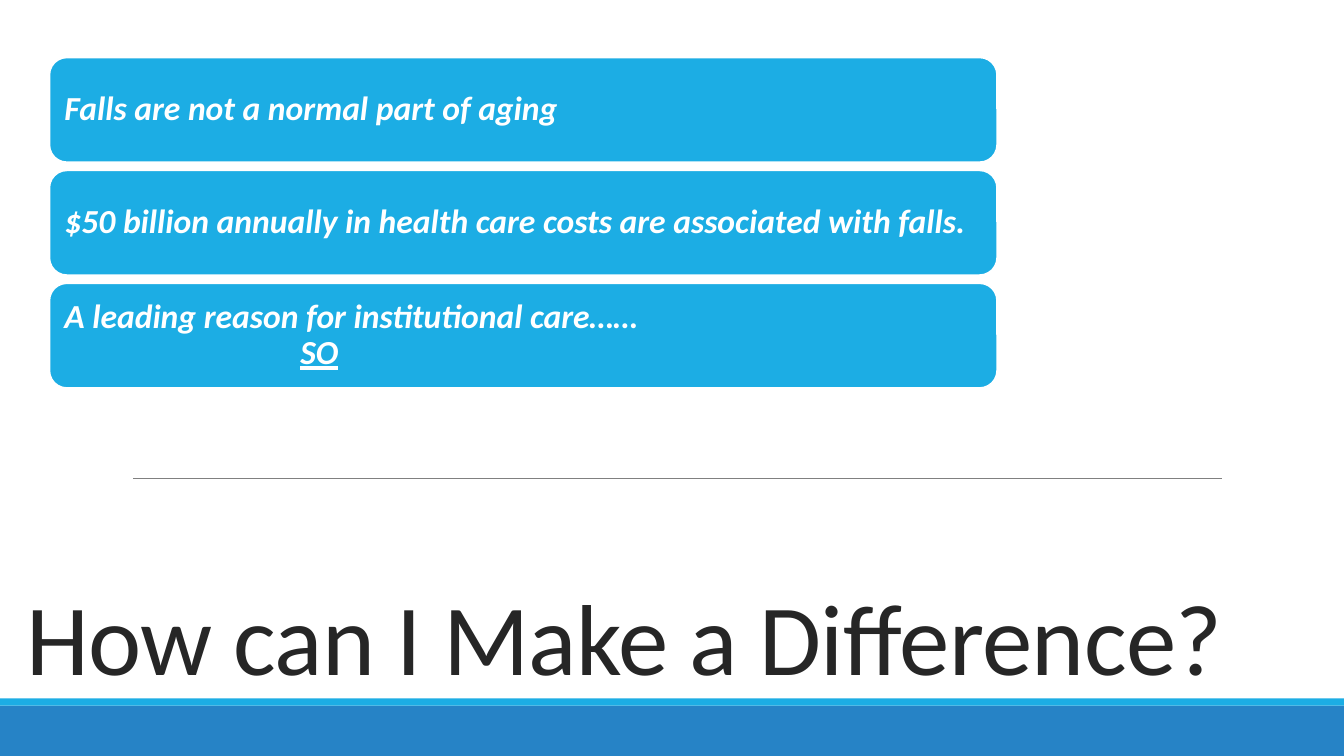
from pptx import Presentation
from pptx.dml.color import RGBColor
from pptx.enum.shapes import MSO_CONNECTOR, MSO_SHAPE
from pptx.enum.text import MSO_ANCHOR, PP_ALIGN
from pptx.oxml.ns import qn
from pptx.util import Inches, Pt
from lxml import etree

RECT = MSO_SHAPE.RECTANGLE
ROUNDED = MSO_SHAPE.ROUNDED_RECTANGLE
STRAIGHT = MSO_CONNECTOR.STRAIGHT
MIDDLE = MSO_ANCHOR.MIDDLE
BOTTOM = MSO_ANCHOR.BOTTOM
LEFT = PP_ALIGN.LEFT

WHITE = RGBColor(0xFF, 0xFF, 0xFF)
CYAN = RGBColor(0x1C, 0xAD, 0xE4)
BLUE = RGBColor(0x26, 0x83, 0xC6)
GRAY = RGBColor(0x80, 0x80, 0x80)
DARK = RGBColor(0x26, 0x26, 0x26)


def add_box(kind, x, y, w, h, color):
    sp = s.shapes.add_shape(kind, Inches(x), Inches(y), Inches(w), Inches(h))
    sp.shadow.inherit = False
    sp.fill.solid()
    sp.fill.fore_color.rgb = color
    sp.line.fill.background()
    return sp


def add_run(p, text, size, color):
    r = p.add_run()
    r.text = text
    r.font.name = "Calibri"
    r.font.size = Pt(size)
    r.font.color.rgb = color
    return r


prs = Presentation()
prs.slide_width = Inches(13.33)
prs.slide_height = Inches(7.5)
s = prs.slides.add_slide(prs.slide_layouts[6])

add_box(RECT, 0, 7, 13.33, 0.5, BLUE)
add_box(RECT, 0, 6.93, 13.33, 0.07, CYAN)

rule = s.shapes.add_connector(STRAIGHT, Inches(1.32), Inches(4.75), Inches(12.12), Inches(4.75))
rule.line.color.rgb = GRAY
rule.line.width = Pt(0.5)
etree.SubElement(rule._element.spPr, qn("a:effectLst"))

title = s.shapes.add_textbox(Inches(0.16), Inches(4.66), Inches(13.02), Inches(2.3))
tf = title.text_frame
tf.word_wrap = True
tf.vertical_anchor = BOTTOM
p = tf.paragraphs[0]
p.line_spacing = 0.85
r = add_run(p, "How can I Make a Difference?", 72, DARK)
r.font._element.set("spc", "-50")

facts = [
    ["Falls are not a normal part of aging"],
    ["$50 billion annually in health care costs are associated with falls."],
    ["A leading reason for institutional care……", "SO"],
]
for i, lines in enumerate(facts):
    sp = add_box(ROUNDED, 0.49, 0.57 + 1.12 * i, 9.4, 1.04, CYAN)
    sp.line.color.rgb = WHITE
    sp.line.width = Pt(1.25)
    tf = sp.text_frame
    tf.word_wrap = True
    tf.vertical_anchor = MIDDLE
    tf.margin_left = tf.margin_right = Inches(0.1)
    tf.margin_top = tf.margin_bottom = Inches(0.1)
    for j, line in enumerate(lines):
        p = tf.paragraphs[0] if j == 0 else tf.add_paragraph()
        p.alignment = LEFT
        p.line_spacing = 0.9
        r = add_run(p, line, 24, WHITE)
        r.font.bold = r.font.italic = True
        if j > 0:
            p._p.get_or_add_pPr().set("marL", str(Inches(2.34)))
            r.font.underline = True

prs.save("out.pptx")
